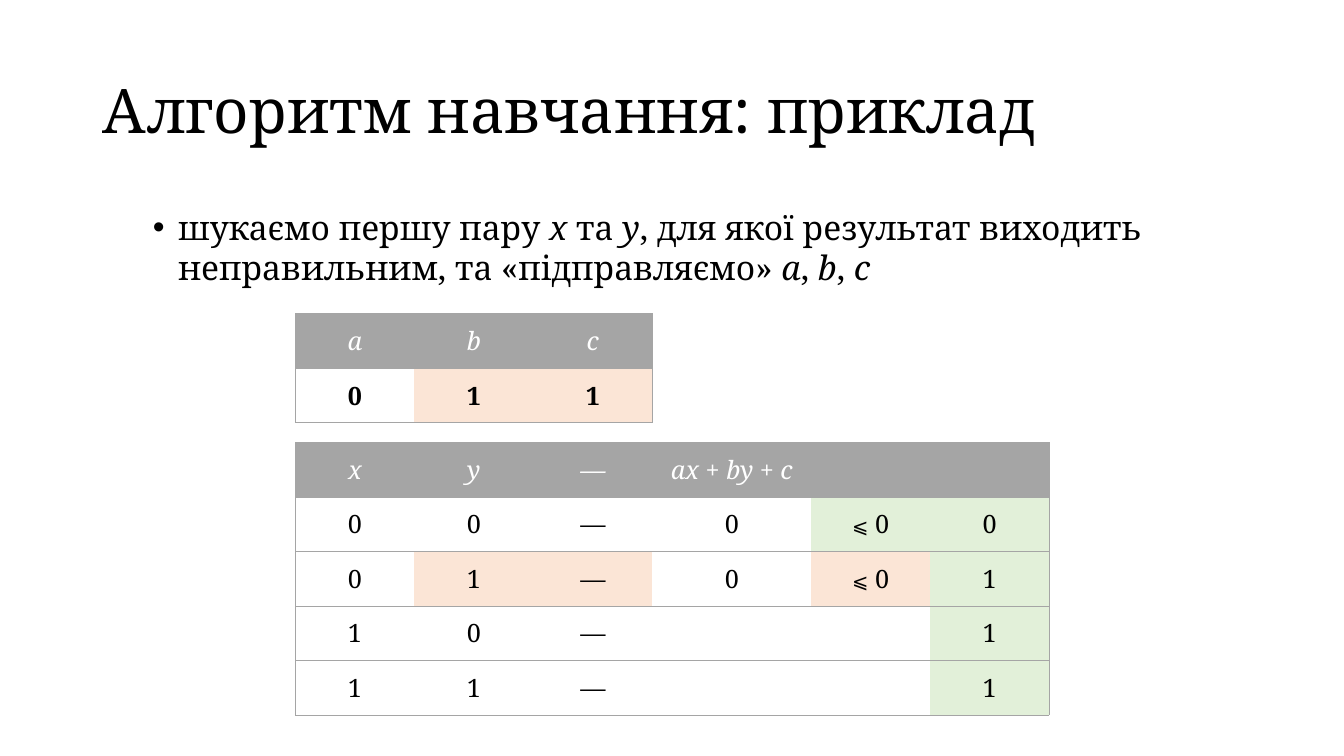
from itertools import groupby

from lxml.etree import SubElement
from pptx import Presentation
from pptx.dml.color import RGBColor
from pptx.enum.text import MSO_ANCHOR, PP_ALIGN
from pptx.oxml.ns import qn
from pptx.util import Pt

COLORS = {"text": "000000", "paper": "FFFFFF", "grey": "A5A5A5",
          "wrong": "FBE5D6", "right": "E2F0D9"}
VARIABLES = "abcxy"
COLUMN, ROW, TABLE_LEFT = 85, 38.7, 211


class LessonSlide:
    """Holds the style and the current slide, and adds each kind of element."""

    font = "Noto Serif"

    def __init__(self, slide):
        self.slide = slide

    def add_words(self, paragraph, text, size, color="text", bold=False, italics=VARIABLES):
        for (italic, relation), letters in groupby(
                text, lambda letter: (letter in italics, letter == "⩽")):
            run = paragraph.add_run()
            run.text = "".join(letters)
            run.font.name = self.font
            run.font.size = Pt(14 if relation else size)
            run.font.bold = bold
            run.font.italic = italic
            run.font.color.rgb = RGBColor.from_string(COLORS[color])

    def place(self, holder, left, top, width, height):
        holder.left, holder.top = Pt(left), Pt(top)
        holder.width, holder.height = Pt(width), Pt(height)
        holder.text_frame.word_wrap = True
        return holder.text_frame.paragraphs[0]

    def title(self, text, *box):
        heading = self.slide.shapes.title
        line = self.place(heading, *box)
        heading.text_frame.vertical_anchor = MSO_ANCHOR.MIDDLE
        line.alignment = PP_ALIGN.LEFT
        line.line_spacing = 0.9
        self.add_words(line, text, 44, italics="")

    def bullet(self, text, *box):
        item = self.place(self.slide.placeholders[1], *box)
        item.level = 1
        item.line_spacing = 1.0
        item.space_before, item.space_after = Pt(5), Pt(15)
        properties = item._p.get_or_add_pPr()
        properties.set("marL", str(Pt(54)))
        properties.set("indent", str(Pt(-18)))
        SubElement(properties, qn("a:buFont"), typeface="Arial")
        SubElement(properties, qn("a:buChar"), char="•")
        self.add_words(item, text, 24)

    def border(self, cell, side, visible):
        properties = cell._tc.get_or_add_tcPr()
        edge = SubElement(properties, qn(f"a:ln{side}"), w=str(Pt(0.5)))
        if visible:
            fill = SubElement(edge, qn("a:solidFill"))
            SubElement(fill, qn("a:srgbClr"), val=COLORS["grey"])
        else:
            SubElement(edge, qn("a:noFill"))

    def table(self, rows, widths, top, shades, bold=False):
        grid = self.slide.shapes.add_table(
            len(rows), len(widths), Pt(TABLE_LEFT), Pt(top),
            Pt(sum(widths)), Pt(ROW * len(rows))).table
        for column, width in zip(grid.columns, widths):
            column.width = Pt(width)
        for r, texts in enumerate(rows):
            grid.rows[r].height = Pt(ROW)
            header = r == 0
            for c, text in enumerate(texts):
                cell = grid.cell(r, c)
                cell.margin_left = cell.margin_right = Pt(7.2)
                cell.margin_top = cell.margin_bottom = Pt(7.2)
                self.border(cell, "L", c == 0)
                self.border(cell, "R", c == len(widths) - 1)
                self.border(cell, "T", True)
                self.border(cell, "B", True)
                shade = "grey" if header else shades.get((r, c), "paper")
                cell.fill.solid()
                cell.fill.fore_color.rgb = RGBColor.from_string(COLORS[shade])
                entry = cell.text_frame.paragraphs[0]
                entry.alignment = PP_ALIGN.CENTER
                entry.font.size = Pt(18)
                self.add_words(entry, text, 18, "paper" if header else "text",
                               bold and not header,
                               VARIABLES + "—" if header else VARIABLES)


def main():
    deck = Presentation()
    deck.slide_width, deck.slide_height = Pt(960), Pt(540)
    lesson = LessonSlide(deck.slides.add_slide(deck.slide_layouts[1]))
    lesson.title("Алгоритм навчання: приклад", 66, 28.8, 828, 104.4)
    lesson.bullet("шукаємо першу пару x та y, для якої результат виходить "
                  "неправильним, та «підправляємо» a, b, c", 66, 144, 828, 367)

    results = [["x", "y", "—", "ax + by + c", "", ""],
               ["0", "0", "—", "0", "⩽ 0", "0"],
               ["0", "1", "—", "0", "⩽ 0", "1"],
               ["1", "0", "—", "", "", "1"],
               ["1", "1", "—", "", "", "1"]]
    result_shades = {(r, 5): "right" for r in range(1, len(results))}
    result_shades[1, 4] = "right"
    result_shades.update({(2, c): "wrong" for c in (1, 2, 4)})
    lesson.table(results, [COLUMN] * 3 + [113.5] + [COLUMN] * 2, 316, result_shades)

    weights = [["a", "b", "c"], ["0", "1", "1"]]
    lesson.table(weights, [COLUMN] * 3, 224, {(1, 1): "wrong", (1, 2): "wrong"}, bold=True)
    deck.save("out.pptx")


if __name__ == "__main__":
    main()
